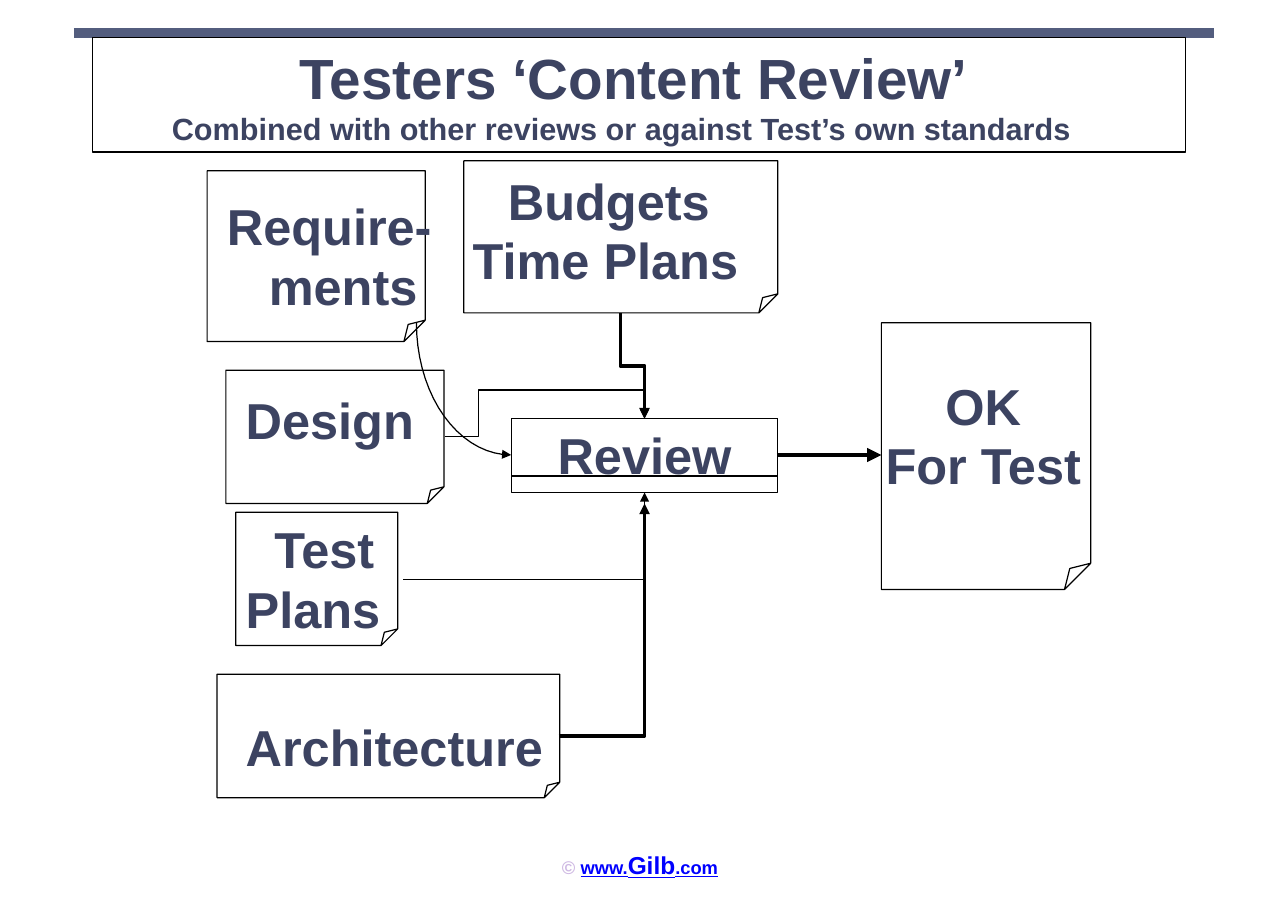
import math
from lxml import etree
from pptx import Presentation
from pptx.dml.color import RGBColor
from pptx.enum import shapes, text
from pptx.oxml import ns
from pptx.util import Inches, Pt

NAVY = RGBColor(0x3C, 0x43, 0x61)
SLATE = RGBColor(0x53, 0x5D, 0x7E)
BLACK = RGBColor(0, 0, 0)
LILAC = RGBColor(0xCE, 0xB8, 0xE3)
LINK = RGBColor(0, 0, 0xFF)
THIN, THICK, HEAVY = 0.78, 2.33, 3.1

# Content: label lines are (text, left indent)
FRAMES = [(0.84, 0.34, 9.92, 1.04), (4.64, 3.8, 2.42, 0.67), (4.64, 3.8, 2.42, 0.52)]
NOTES = {
    "Requirements": (1.88, 1.55, 1.98, 1.55),
    "Design": (2.05, 3.36, 1.98, 1.21),
    "Test Plans": (2.14, 4.65, 1.47, 1.21),
    "Architecture": (1.97, 6.12, 3.11, 1.12),
    "Budgets": (4.21, 1.46, 2.85, 1.38),
    "OK For Test": (8, 2.93, 1.9, 2.42),
}
HEADINGS = [
    ("Testers ‘Content Review’", (2.72, 0.39, 6.5, 0.65), 37),
    ("Combined with other reviews or against Test’s own standards", (1.56, 1.0, 8.8, 0.31), 20),
]
LABELS = [
    ([("Require-", 0), ("ments", 0.38)], (2.06, 1.78, 2.1, 1.07)),
    ([("Design", 0)], (2.23, 3.53, 1.8, 0.51)),
    ([("Test", 0.26), ("Plans", 0)], (2.23, 4.71, 1.5, 1.07)),
    ([("Architecture", 0)], (2.23, 6.5, 2.9, 0.51)),
    ([("Budgets", 0.32), ("Time Plans", 0)], (4.29, 1.55, 2.7, 1.07)),
    ([("Review", 0.42)], (4.64, 3.85, 2.42, 0.52)),
]
VERDICT = ["OK", "For Test"], (8.02, 3.41, 1.81, 1.07)
FOOTER = [("© ", 12, LILAC, False), ("www.", 12, LINK, True),
          ("Gilb", 16, LINK, True), (".com", 12, LINK, True)]

# Arrow routes: the curve is a quarter ellipse
REVIEW_X = 5.85
CURVE = [(4.64 - 0.86 * math.cos(math.radians(a)), 2.93 + 1.2 * math.sin(math.radians(a)))
         for a in range(0, 91, 5)]
ROUTES = [
    (CURVE, THIN),
    ([(3.66, 5.26), (REVIEW_X, 5.26), (REVIEW_X, 4.47)], THIN),
    ([(5.07, 6.68), (REVIEW_X, 6.68), (REVIEW_X, 4.57)], THICK),
    ([(4.04, 3.96), (4.34, 3.96), (4.34, 3.54), (REVIEW_X, 3.54), (REVIEW_X, 3.8)], THIN),
    ([(5.63, 2.84), (5.63, 3.32), (REVIEW_X, 3.32), (REVIEW_X, 3.8)], THICK),
]

presentation = Presentation()
presentation.slide_width, presentation.slide_height = Inches(11.69), Inches(8.26)
slide = presentation.slides.add_slide(presentation.slide_layouts[6])


def outline(shape, width=THIN):
    shape.shadow.inherit = False
    shape.fill.background()
    shape.line.color.rgb = BLACK
    shape.line.width = Pt(width)


def add_arrowhead(shape):
    head = etree.SubElement(shape.line._get_or_add_ln(), ns.qn("a:tailEnd"))
    head.set("type", "triangle")


def add_outlined(kind, box):
    shape = slide.shapes.add_shape(kind, *map(Inches, box))
    outline(shape)
    return shape


def add_note(box):
    note = add_outlined(shapes.MSO_SHAPE.FOLDED_CORNER, box)
    values = note._element.spPr.find(ns.qn("a:prstGeom")).get_or_add_avLst()
    fold = etree.SubElement(values, ns.qn("a:gd"))
    fold.set("name", "adj")
    fold.set("fmla", "val 12500")


def add_line(start, end, color, width):
    line = slide.shapes.add_connector(
        shapes.MSO_CONNECTOR.STRAIGHT, *map(Inches, start + end))
    line.line.color.rgb = color
    line.line.width = Pt(width)
    etree.SubElement(line._element.spPr, ns.qn("a:effectLst"))
    return line


def add_route(points, width):
    corners = [(Inches(x), Inches(y)) for x, y in points]
    builder = slide.shapes.build_freeform(*corners[0])
    builder.add_line_segments(corners[1:], close=False)
    route = builder.convert_to_shape()
    outline(route, width)
    add_arrowhead(route)


def add_text(lines, box, align=text.PP_ALIGN.LEFT, spacing=None):
    """Each line is (indent, runs); each run is (text, size, color, underline)."""
    frame = slide.shapes.add_textbox(*map(Inches, box)).text_frame
    frame.word_wrap = True
    frame.margin_left = frame.margin_right = frame.margin_top = frame.margin_bottom = 0
    for index, (indent, runs) in enumerate(lines):
        paragraph = frame.add_paragraph() if index else frame.paragraphs[0]
        paragraph.alignment = align
        if spacing:
            paragraph.line_spacing = Pt(spacing)
        paragraph._p.get_or_add_pPr().set("marL", str(Inches(indent)))
        for words, size, color, underline in runs:
            run = paragraph.add_run()
            run.text = words
            run.font.name, run.font.size, run.font.bold = "Arial", Pt(size), True
            run.font.color.rgb = color
            run.font.underline = underline


# Header
add_line((0.67, 0.3), (11.02, 0.3), SLATE, 6.21)
for box in FRAMES:
    add_outlined(shapes.MSO_SHAPE.RECTANGLE, box)
for heading, box, size in HEADINGS:
    add_text([(0, [(heading, size, NAVY, False)])], box)

# Documents with a folded corner
for box in NOTES.values():
    add_note(box)

# Arrows
for points, width in ROUTES:
    add_route(points, width)
add_arrowhead(add_line((7.05, 4.13), (8, 4.13), BLACK, HEAVY))

# Labels
for lines, box in LABELS:
    add_text([(indent, [(words, 33, NAVY, False)]) for words, indent in lines],
             box, spacing=39 if len(lines) > 1 else None)
verdict_lines, verdict_box = VERDICT
add_text([(0, [(words, 33, NAVY, False)]) for words in verdict_lines],
         verdict_box, align=text.PP_ALIGN.CENTER, spacing=39)

# Footer
add_text([(0, FOOTER)], (5.1, 7.72, 1.8, 0.26), spacing=19)

presentation.save("out.pptx")
